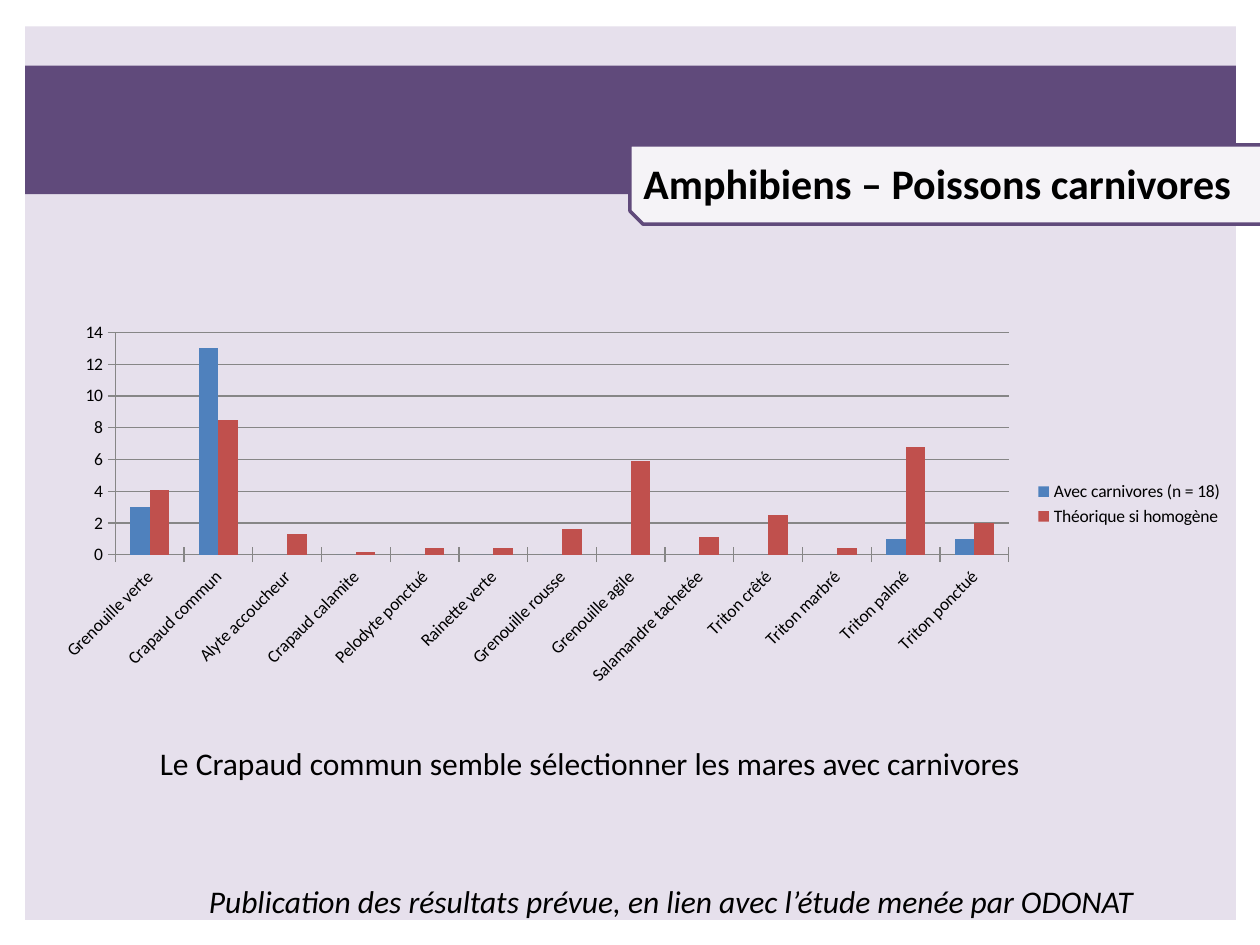
from dataclasses import dataclass

from pptx import Presentation
from pptx.chart.data import CategoryChartData
from pptx.dml.color import RGBColor
from pptx.enum.chart import XL_CHART_TYPE as Kind, XL_LEGEND_POSITION as Side
from pptx.enum.chart import XL_TICK_MARK as Tick
from pptx.enum.shapes import MSO_SHAPE as Form
from pptx.enum.text import MSO_AUTO_SIZE as Fit, PP_ALIGN as Align
from pptx.slide import Slide
from pptx.util import Inches, Pt

BLACK = RGBColor(0x00, 0x00, 0x00)
LILAC = RGBColor(0xE6, 0xE0, 0xEC)
PLUM = RGBColor(0x60, 0x4A, 0x7B)
PALE = RGBColor(0xF5, 0xF3, 0xF7)
BLUE = RGBColor(0x4F, 0x81, 0xBD)
RED = RGBColor(0xC0, 0x50, 0x4D)
GREY = RGBColor(0x86, 0x86, 0x86)
FACE = "Calibri"


@dataclass(frozen=True)
class Box:
    left: float
    top: float
    width: float
    height: float

    def place(self) -> tuple:
        return tuple(map(Inches, (self.left, self.top, self.width, self.height)))


@dataclass(frozen=True)
class Panel:
    box: Box
    fill: RGBColor
    form: Form = Form.RECTANGLE
    edge: RGBColor | None = None


@dataclass(frozen=True)
class Label:
    box: Box
    text: str
    style: dict
    align: Align = Align.LEFT


@dataclass(frozen=True)
class Bars:
    name: str
    color: RGBColor
    values: tuple


PANELS = (
    Panel(Box(0.2, 0.21, 9.61, 7.09), LILAC),
    Panel(Box(0.2, 0.52, 9.61, 1.02), PLUM),
    Panel(Box(5, 1.15, 5.2, 0.63), PALE, Form.SNIP_2_DIAG_RECTANGLE, PLUM),
)
LABELS = (
    Label(Box(5, 1.2, 4.88, 0.5), "Amphibiens – Poissons carnivores",
          {"size": Pt(24), "bold": True}, Align.CENTER),
    Label(Box(1.17, 5.86, 7.66, 0.4),
          "Le Crapaud commun semble sélectionner les mares avec carnivores",
          {"size": Pt(18)}),
    Label(Box(1.56, 6.95, 9.06, 0.4),
          "Publication des résultats prévue, en lien avec l’étude menée par ODONAT",
          {"size": Pt(18), "italic": True}),
)
SPECIES = (
    "Grenouille verte", "Crapaud commun", "Alyte accoucheur", "Crapaud calamite",
    "Pelodyte ponctué", "Rainette verte", "Grenouille rousse", "Grenouille agile",
    "Salamandre tachetée", "Triton crêté", "Triton marbré", "Triton palmé",
    "Triton ponctué",
)
SERIES = (
    Bars("Avec carnivores (n = 18)", BLUE, (3, 13, 0, 0, 0, 0, 0, 0, 0, 0, 0, 1, 1)),
    Bars("Théorique si homogène", RED,
         (4.1, 8.5, 1.3, 0.2, 0.4, 0.4, 1.6, 5.9, 1.1, 2.5, 0.4, 6.8, 2)),
)


def set_font(font, style: dict) -> None:
    for key, value in ({"name": FACE} | style).items():
        setattr(font, key, value)
    font.color.rgb = BLACK


def draw_panel(slide: Slide, panel: Panel) -> None:
    shape = slide.shapes.add_shape(panel.form, *panel.box.place())
    shape.shadow.inherit = False
    shape.fill.solid()
    shape.fill.fore_color.rgb = panel.fill
    if panel.edge is None:
        shape.line.fill.background()
    else:
        shape.line.color.rgb = panel.edge
        shape.line.width = Pt(2)


def draw_label(slide: Slide, label: Label) -> None:
    frame = slide.shapes.add_textbox(*label.box.place()).text_frame
    frame.word_wrap = True
    frame.auto_size = Fit.SHAPE_TO_FIT_TEXT
    para = frame.paragraphs[0]
    para.alignment = label.align
    run = para.add_run()
    run.text = label.text
    set_font(run.font, label.style)


def draw_chart(slide: Slide, box: Box) -> None:
    data = CategoryChartData()
    data.categories = SPECIES
    for bars in SERIES:
        data.add_series(bars.name, bars.values)
    chart = slide.shapes.add_chart(Kind.COLUMN_CLUSTERED, *box.place(), data).chart
    set_font(chart.font, {"size": Pt(10)})
    chart.has_title = False
    chart.has_legend = True
    chart.legend.position = Side.RIGHT
    chart.legend.include_in_layout = False
    plot = chart.plots[0]
    plot.vary_by_categories = False
    plot.gap_width = 150
    plot.overlap = 0
    for series, bars in zip(plot.series, SERIES):
        series.format.fill.solid()
        series.format.fill.fore_color.rgb = bars.color
    scale = chart.value_axis
    for axis in (chart.category_axis, scale):
        axis.major_tick_mark = Tick.CROSS
        axis.minor_tick_mark = Tick.NONE
        axis.format.line.color.rgb = GREY
    scale.has_major_gridlines = True
    scale.major_gridlines.format.line.color.rgb = GREY
    scale.tick_labels.number_format = "0"
    scale.tick_labels.number_format_is_linked = False


def main() -> None:
    deck = Presentation()
    deck.slide_width, deck.slide_height = Inches(10), Inches(7.5)
    slide = deck.slides.add_slide(deck.slide_layouts[6])
    for panel in PANELS:
        draw_panel(slide, panel)
    draw_chart(slide, Box(0.31, 2.5, 9.5, 3))
    for label in LABELS:
        draw_label(slide, label)
    deck.save("out.pptx")


if __name__ == "__main__":
    main()
